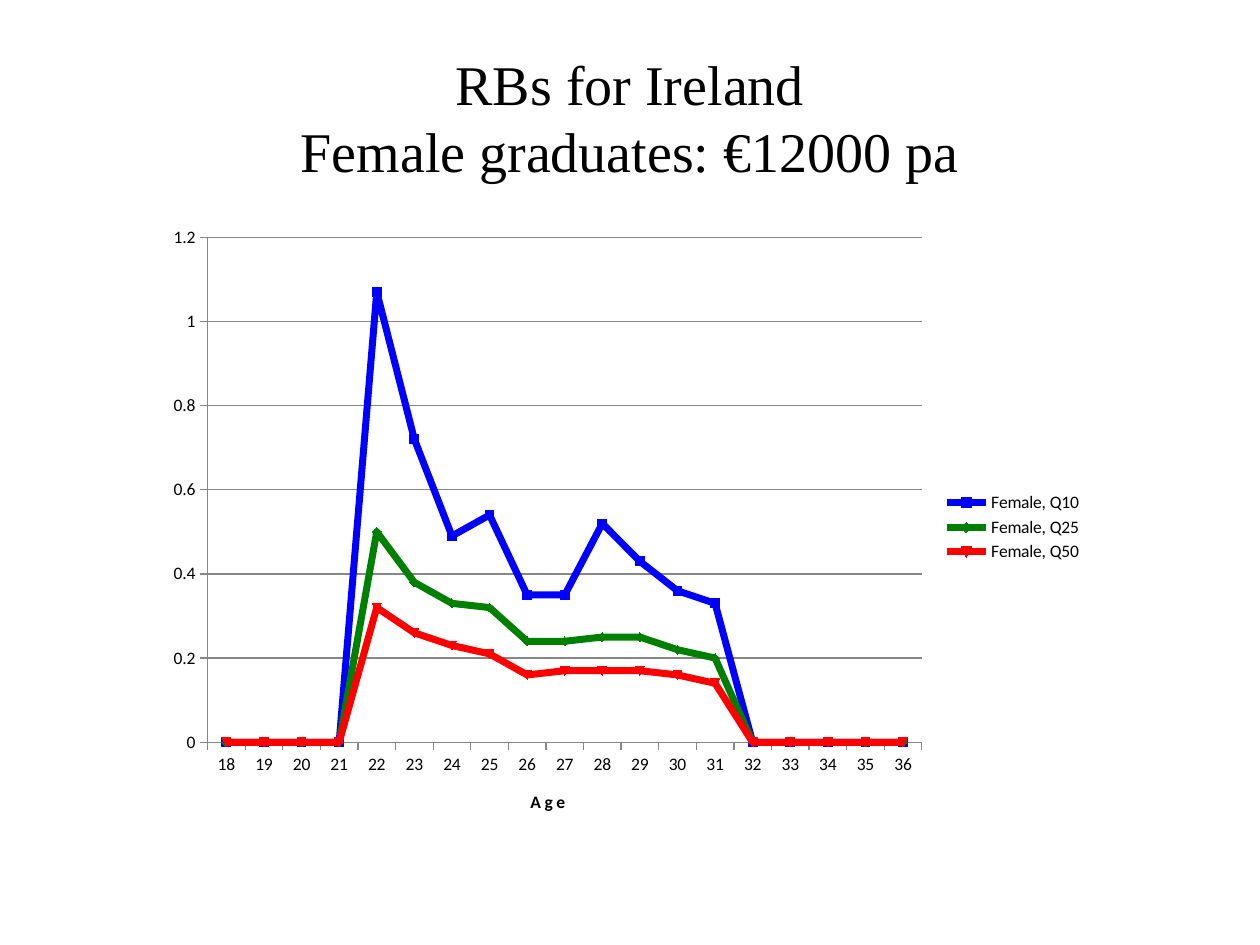
import pptx
import pptx.chart.data
import pptx.dml.color
import pptx.enum.chart
import pptx.enum.text
import pptx.oxml
import pptx.util

WIDTH, HEIGHT = 10, 7.5
TITLE_BOX = (0.05, 0.04, 0.9, 0.167)  # shares of the slide
CHART_BOX = (0.123, 0.228, 0.746, 0.66)
PLOT_AREA = {"x": 0.056, "y": 0.035, "w": 0.76, "h": 0.81}  # shares of the chart

AGES = range(18, 37)
FIRST_AGE = 22
SERIES = {
    "Female, Q10": ("0000FF", [1.07, 0.72, 0.49, 0.54, 0.35, 0.35, 0.52, 0.43, 0.36, 0.33]),
    "Female, Q25": ("008000", [0.5, 0.38, 0.33, 0.32, 0.24, 0.24, 0.25, 0.25, 0.22, 0.2]),
    "Female, Q50": ("FF0000", [0.32, 0.26, 0.23, 0.21, 0.16, 0.17, 0.17, 0.17, 0.16, 0.14]),
}


def color(value):
    return pptx.dml.color.RGBColor.from_string(value)


def place(box):
    sizes = (WIDTH, HEIGHT, WIDTH, HEIGHT)
    return [pptx.util.Inches(share * size) for share, size in zip(box, sizes)]


def style_font(font, name, size, bold=False):
    values = {"name": name, "size": pptx.util.Pt(size), "bold": bold}
    for attribute, value in values.items():
        setattr(font, attribute, value)
    font.color.rgb = color("000000")


def style_line(line, value, width):
    line.color.rgb = color(value)
    line.width = pptx.util.Pt(width)


def add_title(slide, box):
    frame = slide.shapes.add_textbox(*place(box)).text_frame
    frame.word_wrap = True
    frame.vertical_anchor = pptx.enum.text.MSO_ANCHOR.MIDDLE
    paragraph = frame.paragraphs[0]
    paragraph.alignment = pptx.enum.text.PP_ALIGN.CENTER
    paragraph.text = "RBs for Ireland\vFemale graduates: €12000 pa"
    style_font(paragraph.font, "Times New Roman", 32)
    for run in paragraph.runs:
        style_font(run.font, "Times New Roman", 32)


def set_plot_area(chart, area):
    plot_area = chart.plots[0]._element.getparent()
    for old_layout in plot_area.findall(pptx.oxml.ns.qn("c:layout")):
        plot_area.remove(old_layout)
    parts = '<c:layoutTarget val="inner"/><c:xMode val="edge"/><c:yMode val="edge"/>'
    parts += "".join(f'<c:{key} val="{share}"/>' for key, share in area.items())
    plot_area.insert(0, pptx.oxml.parse_xml(
        f'<c:layout {pptx.oxml.ns.nsdecls("c")}><c:manualLayout>{parts}</c:manualLayout></c:layout>'))


def add_age_chart(slide, box):
    data = pptx.chart.data.CategoryChartData()
    data.categories = [str(age) for age in AGES]
    for name, (_, values) in SERIES.items():
        before = [0] * (FIRST_AGE - AGES[0])
        after = [0] * (len(AGES) - len(before) - len(values))
        data.add_series(name, before + values + after)
    chart = slide.shapes.add_chart(
        pptx.enum.chart.XL_CHART_TYPE.LINE_MARKERS, *place(box), data).chart
    chart.has_title = False
    style_font(chart.font, "Calibri", 10)
    set_plot_area(chart, PLOT_AREA)

    # Legend
    chart.has_legend = True
    chart.legend.position = pptx.enum.chart.XL_LEGEND_POSITION.RIGHT
    chart.legend.include_in_layout = False

    # Axes
    for axis in (chart.category_axis, chart.value_axis):
        axis.major_tick_mark = pptx.enum.chart.XL_TICK_MARK.OUTSIDE
        axis.minor_tick_mark = pptx.enum.chart.XL_TICK_MARK.NONE
        style_line(axis.format.line, "868686", 0.75)
    paragraph = chart.category_axis.axis_title.text_frame.paragraphs[0]
    paragraph.text = "A g e"
    style_font(paragraph.runs[0].font, "Calibri", 10, bold=True)
    scale = {"minimum_scale": 0, "maximum_scale": 1.2, "major_unit": 0.2,
             "has_major_gridlines": True}
    for attribute, value in scale.items():
        setattr(chart.value_axis, attribute, value)
    chart.value_axis.tick_labels.number_format = "General"
    chart.value_axis.tick_labels.number_format_is_linked = False
    style_line(chart.value_axis.major_gridlines.format.line, "868686", 0.75)

    # Lines and markers
    plot = chart.plots[0]
    plot.vary_by_categories = False
    for series in plot.series:
        value = SERIES[series.name][0]
        series.smooth = False
        style_line(series.format.line, value, 4)
        series.marker.style = pptx.enum.chart.XL_MARKER_STYLE.AUTOMATIC
        series.marker.size = 5
        series.marker.format.fill.solid()
        series.marker.format.fill.fore_color.rgb = color(value)
        style_line(series.marker.format.line, value, 0.75)


def main():
    presentation = pptx.Presentation()
    presentation.slide_width = pptx.util.Inches(WIDTH)
    presentation.slide_height = pptx.util.Inches(HEIGHT)
    slide = presentation.slides.add_slide(presentation.slide_layouts[6])
    add_title(slide, TITLE_BOX)
    add_age_chart(slide, CHART_BOX)
    presentation.save("out.pptx")


if __name__ == "__main__":
    main()
